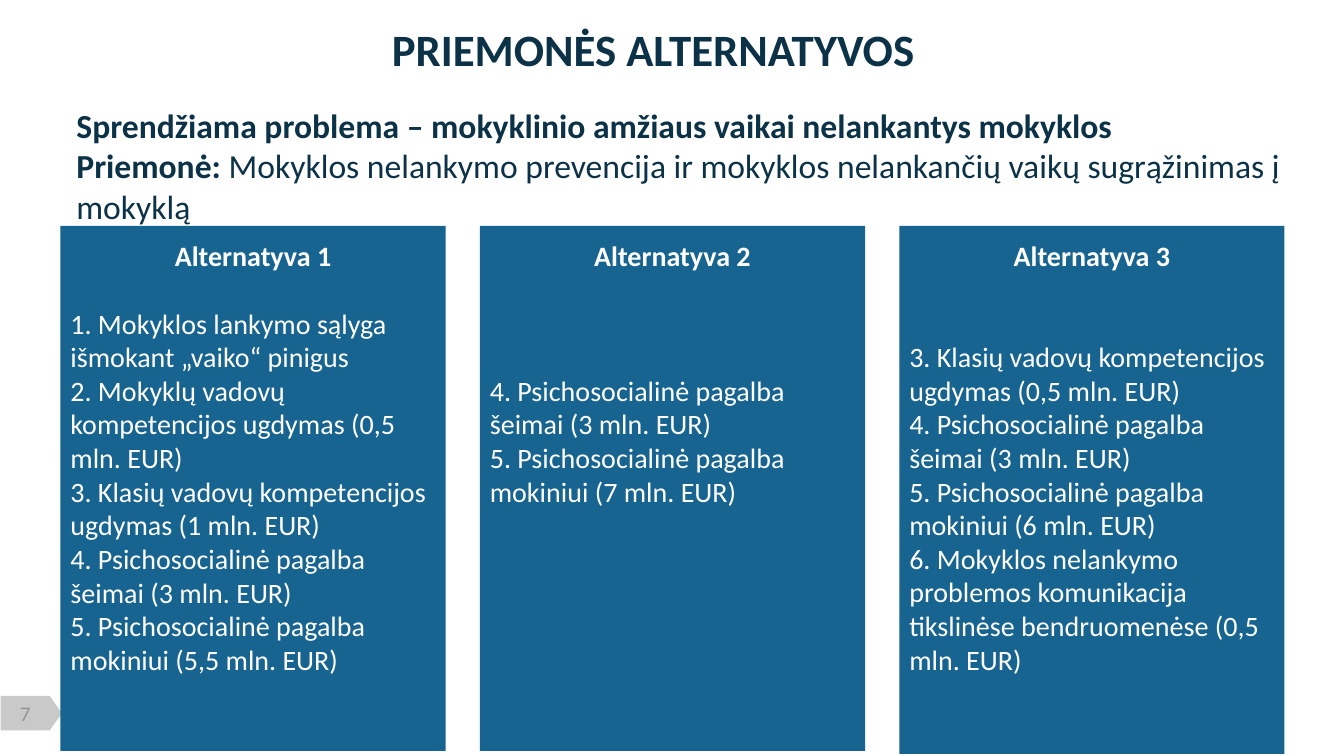
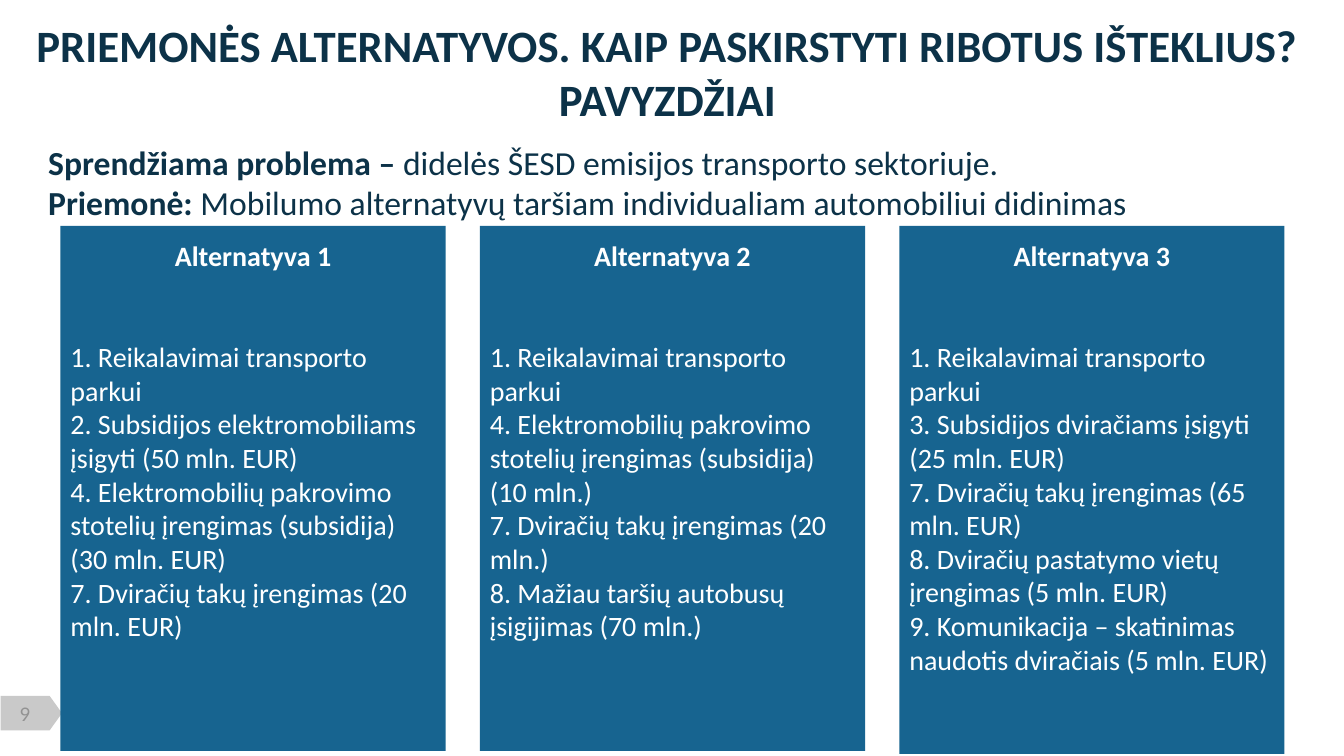
from dataclasses import dataclass

from pptx import Presentation
from pptx.dml.color import RGBColor
from pptx.enum.shapes import MSO_SHAPE
from pptx.enum.text import MSO_ANCHOR, PP_ALIGN
from pptx.util import Inches, Pt

COLORS = {"navy": "0C3248", "card": "176490", "white": "FFFFFF",
          "tab": "C9C9C9", "number": "929292"}
TITLE_ONLY = 5
CARD_LEFT, CARD_TOP, CARD_WIDTH, CARD_STEP = 0.6, 2.24, 3.82, 4.16


@dataclass
class Card:
    heading: str
    gap: int  # points between heading and first measure
    measures: list[str]
    height: float = 5.21


@dataclass
class Page:
    number: str
    title: str
    title_left: float
    title_top: float
    title_height: float
    intro_left: float
    intro_top: float
    intro: list[tuple[str, str]]  # bold part, regular part
    cards: list[Card]


PAGES = [
    Page("7", "PRIEMONĖS ALTERNATYVOS", 0.1, 0.19, 0.58, 0.66, 0.99, [
        ("Sprendžiama problema – mokyklinio amžiaus vaikai nelankantys mokyklos", ""),
        ("Priemonė:", " Mokyklos nelankymo prevencija ir mokyklos nelankančių vaikų "
                      "sugrąžinimas į mokyklą"),
    ], [
        Card("Alternatyva 1", 24, [
            "1. Mokyklos lankymo sąlyga išmokant „vaiko“ pinigus",
            "2. Mokyklų vadovų kompetencijos ugdymas (0,5 mln. EUR)",
            "3. Klasių vadovų kompetencijos ugdymas (1 mln. EUR)",
            "4. Psichosocialinė pagalba šeimai (3 mln. EUR)",
            "5. Psichosocialinė pagalba mokiniui (5,5 mln. EUR)"]),
        Card("Alternatyva 2", 72, [
            "4. Psichosocialinė pagalba šeimai (3 mln. EUR)",
            "5. Psichosocialinė pagalba mokiniui (7 mln. EUR)"]),
        Card("Alternatyva 3", 48, [
            "3. Klasių vadovų kompetencijos ugdymas (0,5 mln. EUR)",
            "4. Psichosocialinė pagalba šeimai (3 mln. EUR)",
            "5. Psichosocialinė pagalba mokiniui (6 mln. EUR)",
            "6. Mokyklos nelankymo problemos komunikacija tikslinėse "
            "bendruomenėse (0,5 mln. EUR)"], 5.24),
    ]),
    Page("9", "PRIEMONĖS ALTERNATYVOS. KAIP PASKIRSTYTI RIBOTUS IŠTEKLIUS? PAVYZDŽIAI",
         0.24, 0.13, 1.16, 0.38, 1.36, [
             ("Sprendžiama problema – ", "didelės ŠESD emisijos transporto sektoriuje."),
             ("Priemonė:", " Mobilumo alternatyvų taršiam individualiam automobiliui didinimas"),
         ], [
             Card("Alternatyva 1", 48, [
                 "1. Reikalavimai transporto parkui",
                 "2. Subsidijos elektromobiliams įsigyti (50 mln. EUR)",
                 "4. Elektromobilių pakrovimo stotelių įrengimas (subsidija) (30 mln. EUR)",
                 "7. Dviračių takų įrengimas (20 mln. EUR)"]),
             Card("Alternatyva 2", 48, [
                 "1. Reikalavimai transporto parkui",
                 "4. Elektromobilių pakrovimo stotelių įrengimas (subsidija) (10 mln.)",
                 "7. Dviračių takų įrengimas (20 mln.)",
                 "8. Mažiau taršių autobusų įsigijimas (70 mln.)"]),
             Card("Alternatyva 3", 48, [
                 "1. Reikalavimai transporto parkui",
                 "3. Subsidijos dviračiams įsigyti (25 mln. EUR)",
                 "7. Dviračių takų įrengimas (65 mln. EUR)",
                 "8. Dviračių pastatymo vietų įrengimas (5 mln. EUR)",
                 "9. Komunikacija – skatinimas naudotis dviračiais (5 mln. EUR)"], 5.24),
         ]),
]


def color(name: str) -> RGBColor:
    return RGBColor.from_string(COLORS[name])


def add_text(para, text: str, *, size: float, ink: str, bold: bool = False,
             font: str = "Calibri", align=PP_ALIGN.LEFT, before: float = 0) -> None:
    """Add one formatted span to a paragraph."""
    para.alignment = align
    if before:
        para.space_before = Pt(before)
    span = para.add_run()
    span.text = text
    span.font.name, span.font.size, span.font.bold = font, Pt(size), bold
    span.font.color.rgb = color(ink)


def set_frame(frame, *, anchor=MSO_ANCHOR.TOP, left: float = 0.1, top: float = 0.05,
              right: float = 0.1, bottom: float = 0.05) -> None:
    frame.word_wrap = True
    frame.vertical_anchor = anchor
    frame.margin_left, frame.margin_top = Inches(left), Inches(top)
    frame.margin_right, frame.margin_bottom = Inches(right), Inches(bottom)


def next_para(frame, index: int):
    return frame.paragraphs[0] if index == 0 else frame.add_paragraph()


def add_filled(slide, kind, left: float, top: float, width: float, height: float, fill: str):
    shape = slide.shapes.add_shape(kind, Inches(left), Inches(top),
                                   Inches(width), Inches(height))
    shape.shadow.inherit = False
    shape.fill.solid()
    shape.fill.fore_color.rgb = color(fill)
    shape.line.fill.background()
    return shape


def add_page_number(slide, number: str) -> None:
    tab = add_filled(slide, MSO_SHAPE.FLOWCHART_OFFPAGE_CONNECTOR, 0.14, 6.77, 0.34, 0.61, "tab")
    tab.rotation = 270
    box = slide.shapes.add_textbox(Inches(0.03), Inches(6.97), Inches(0.44), Inches(0.22))
    set_frame(box.text_frame, anchor=MSO_ANCHOR.MIDDLE, left=0, top=0, right=0, bottom=0)
    add_text(box.text_frame.paragraphs[0], number, size=13.3, ink="number",
             font="Lato", align=PP_ALIGN.CENTER)


def add_title(slide, page: Page) -> None:
    title = slide.shapes.title
    title.left, title.top = Inches(page.title_left), Inches(page.title_top)
    title.width, title.height = Inches(12.86), Inches(page.title_height)
    set_frame(title.text_frame, anchor=MSO_ANCHOR.MIDDLE, left=0)
    add_text(title.text_frame.paragraphs[0], page.title, size=32, ink="navy",
             bold=True, align=PP_ALIGN.CENTER)


def add_intro(slide, page: Page) -> None:
    box = slide.shapes.add_textbox(Inches(page.intro_left), Inches(page.intro_top),
                                   Inches(12.36), Inches(CARD_TOP - page.intro_top))
    set_frame(box.text_frame)
    for index, (label, detail) in enumerate(page.intro):
        para = next_para(box.text_frame, index)
        add_text(para, label, size=24, ink="navy", bold=True)
        if detail:
            add_text(para, detail, size=24, ink="navy")


def add_card(slide, card: Card, column: int) -> None:
    box = add_filled(slide, MSO_SHAPE.RECTANGLE, CARD_LEFT + column * CARD_STEP, CARD_TOP,
                     CARD_WIDTH, card.height, "card")
    frame = box.text_frame
    set_frame(frame, top=0.13)
    add_text(frame.paragraphs[0], card.heading, size=20, ink="white", bold=True,
             align=PP_ALIGN.CENTER)
    for index, measure in enumerate(card.measures):
        add_text(frame.add_paragraph(), measure, size=20, ink="white",
                 before=card.gap if index == 0 else 0)


def main() -> None:
    deck = Presentation()
    deck.slide_width, deck.slide_height = Inches(13.33), Inches(7.5)
    for page in PAGES:
        slide = deck.slides.add_slide(deck.slide_layouts[TITLE_ONLY])
        add_page_number(slide, page.number)
        add_title(slide, page)
        add_intro(slide, page)
        for column, card in enumerate(page.cards):
            add_card(slide, card, column)
    deck.save("out.pptx")


if __name__ == "__main__":
    main()
